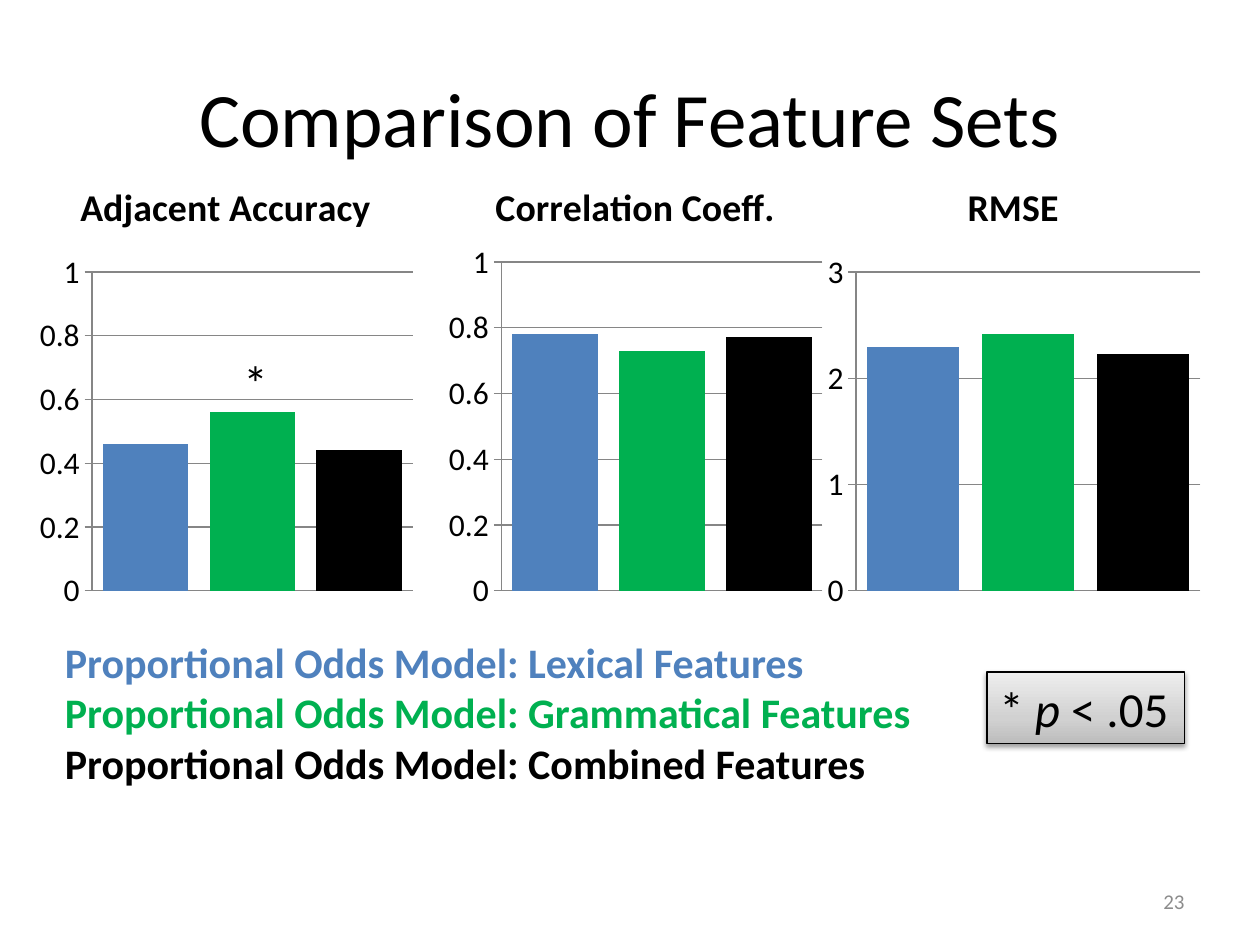
from copy import deepcopy

from lxml.etree import SubElement
from pptx import Presentation
from pptx.chart.data import CategoryChartData
from pptx.dml.color import RGBColor
from pptx.enum.chart import XL_CHART_TYPE as ChartType, XL_TICK_MARK as TickMark
from pptx.enum.shapes import MSO_SHAPE as Shape
from pptx.enum.text import MSO_ANCHOR as Anchor, MSO_AUTO_SIZE as AutoSize, PP_ALIGN as Align
from pptx.oxml.ns import qn
from pptx.util import Inches, Pt

FONT = "Calibri"
COLORS = {
    "lexical": "4F81BD",
    "grammatical": "00B050",
    "combined": "000000",
    "text": "000000",
    "axis": "868686",
    "number": "8C8C8C",
    "key_dark": "BDBDBD",
    "key_middle": "D1D1D1",
    "key_light": "EEEEEE",
}
MODELS = ["lexical", "grammatical", "combined"]
CELL = Inches(1) / 12
METRICS = [
    ("Adjacent Accuracy", 3, [0.46, 0.56, 0.44], 1, 0.2, (0.156, 0.248, 0.825, 0.69)),
    ("Correlation Coeff.", 42, [0.78, 0.73, 0.77], 1, 0.2, (0.155, 0.226, 0.827, 0.712)),
    ("RMSE", 78, [2.29, 2.42, 2.23], 3, 1, (0.095, 0.248, 0.887, 0.69)),
]


def grid(column, row, columns, rows):
    return [int(n * CELL) for n in (column, row, columns, rows)]


def color(name):
    return RGBColor.from_string(COLORS[name])


def style(font, size, ink="text", bold=False, italic=False):
    font.name, font.size, font.bold, font.italic = FONT, Pt(size), bold, italic
    font.color.rgb = color(ink)


def write(paragraph, text, align=Align.LEFT, **look):
    paragraph.alignment = align
    run = paragraph.add_run()
    run.text = text
    style(run.font, **look)


def add_label(slide, box, wrap=False):
    frame = slide.shapes.add_textbox(*box).text_frame
    frame.word_wrap = wrap
    frame.auto_size = AutoSize.NONE if wrap else AutoSize.SHAPE_TO_FIT_TEXT
    return frame


def add_heading(slide, box):
    heading = slide.shapes.title
    heading.left, heading.top, heading.width, heading.height = box
    heading.text_frame.vertical_anchor = Anchor.MIDDLE
    write(heading.text_frame.paragraphs[0], "Comparison of Feature Sets", align=Align.CENTER, size=44)


def set_plot_area(chart, shares):
    plot_area = chart._chartSpace.chart.plotArea
    for layout in plot_area.findall(qn("c:layout")):
        plot_area.remove(layout)
    layout = SubElement(plot_area, qn("c:layout"))
    plot_area.insert(0, layout)
    manual = SubElement(layout, qn("c:manualLayout"))
    settings = [("layoutTarget", "inner"), ("xMode", "edge"), ("yMode", "edge")]
    settings += zip("xywh", shares)
    for tag, value in settings:
        SubElement(manual, qn(f"c:{tag}")).set("val", str(value))


def add_metric(slide, box, title, values, maximum, step, plot_shares):
    data = CategoryChartData()
    data.categories = ["1", "2", "3"]
    data.add_series("Series 1", values)
    chart = slide.shapes.add_chart(ChartType.COLUMN_CLUSTERED, *box, data).chart
    style(chart.font, 18)
    chart.has_legend = False
    chart.has_title = True
    write(chart.chart_title.text_frame.paragraphs[0], title, align=Align.CENTER, size=21.6, bold=True)
    chart.chart_title.include_in_layout = False
    set_plot_area(chart, plot_shares)

    chart.category_axis.visible = False
    scale = chart.value_axis
    scale.minimum_scale, scale.maximum_scale, scale.major_unit = 0, maximum, step
    scale.major_tick_mark = TickMark.CROSS
    scale.minor_tick_mark = TickMark.NONE
    scale.has_major_gridlines = True
    for line in (scale.format.line, scale.major_gridlines.format.line):
        line.color.rgb = color("axis")
        line.width = Pt(0.75)

    plot = chart.plots[0]
    plot.gap_width = 25
    plot.vary_by_categories = False
    for index, model in enumerate(MODELS):
        fill = plot.series[0].points[index].format.fill
        fill.solid()
        fill.fore_color.rgb = color(model)


def add_models(slide, box):
    frame = add_label(slide, box)
    for index, model in enumerate(MODELS):
        paragraph = frame.add_paragraph() if index else frame.paragraphs[0]
        write(paragraph, f"Proportional Odds Model: {model.title()} Features", size=24, ink=model, bold=True)


def add_significance_key(slide, box):
    key = slide.shapes.add_shape(Shape.RECTANGLE, *box)
    key.line.color.rgb = color("text")
    key.line.width = Pt(0.75)

    key.fill.gradient()
    key.fill.gradient_angle = 90
    stops = key._element.spPr.find(qn("a:gradFill")).find(qn("a:gsLst"))
    middle = deepcopy(stops[0])
    middle.set("pos", "35000")
    stops.insert(1, middle)
    for stop, shade in zip(key.fill.gradient_stops, ["key_dark", "key_middle", "key_light"]):
        stop.color.rgb = color(shade)

    key.shadow.inherit = False
    effects = key._element.spPr.find(qn("a:effectLst"))
    shadow = SubElement(effects, qn("a:outerShdw"), blurRad=str(Pt(3.1)), dist=str(Pt(1.6)),
                        dir="5400000", rotWithShape="0")
    tint = SubElement(shadow, qn("a:srgbClr"), val=COLORS["text"])
    SubElement(tint, qn("a:alpha"), val="38000")

    frame = key.text_frame
    frame.word_wrap = False
    frame.auto_size = AutoSize.SHAPE_TO_FIT_TEXT
    frame.vertical_anchor = Anchor.TOP
    for text, italic in [("* ", False), ("p", True), (" < .05", False)]:
        write(frame.paragraphs[0], text, size=28, italic=italic)


def add_page_number(slide, box):
    frame = add_label(slide, box, wrap=True)
    frame.vertical_anchor = Anchor.MIDDLE
    write(frame.paragraphs[0], "23", align=Align.RIGHT, size=12, ink="number")


def main():
    deck = Presentation()
    deck.slide_width, deck.slide_height = Inches(10), Inches(7.5)
    slide = deck.slides.add_slide(deck.slide_layouts[5])
    add_heading(slide, grid(6, 3.6, 108, 15))
    add_page_number(slide, grid(86, 83.4, 28, 4.8))
    for title, column, *details in METRICS:
        add_metric(slide, grid(column, 15, 37, 44), title, *details)
    add_models(slide, grid(5, 60, 83.8, 15.7))
    write(add_label(slide, grid(22, 33, 4.8, 6.8)).paragraphs[0], "*", size=28)
    add_significance_key(slide, grid(94, 64, 18.8, 6.8))
    deck.save("out.pptx")


if __name__ == "__main__":
    main()
